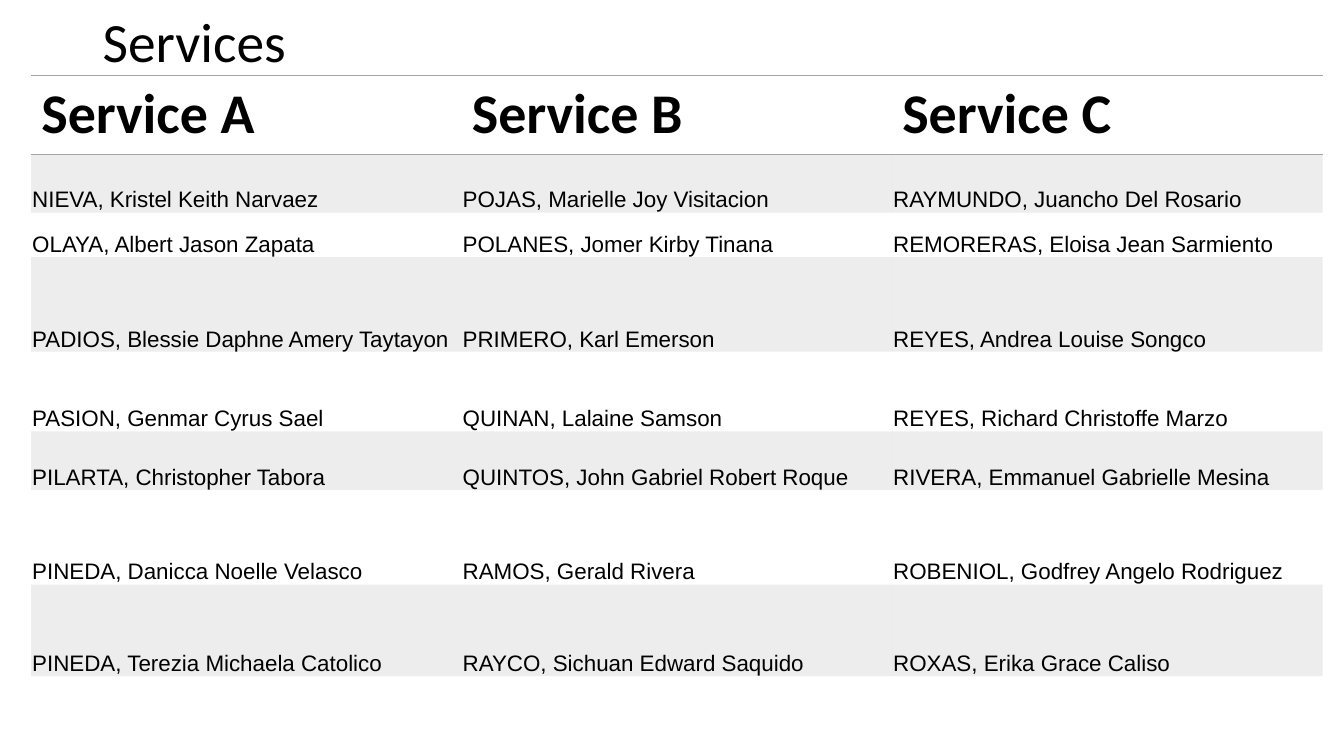
from dataclasses import dataclass

from lxml.etree import SubElement
from pptx import Presentation
from pptx.dml.color import RGBColor
from pptx.enum.text import MSO_ANCHOR
from pptx.oxml import parse_xml
from pptx.oxml.ns import nsdecls, qn
from pptx.slide import Slide
from pptx.table import Table, _Cell
from pptx.text.text import _Paragraph
from pptx.util import Emu, Pt

EMU_PER_PX = 9144
BLACK = "000000"
GREY = "A5A5A5"
BAND_OPACITY = 20
NO_TABLE_STYLE = "{2D5ABB26-0587-4C30-8999-92F81FD0307C}"


@dataclass(frozen=True)
class TextStyle:
    font: str
    size: float
    bold: bool = False


@dataclass(frozen=True)
class ServiceRow:
    height: int
    names: tuple[str, str, str]


TITLE_STYLE = TextStyle("Calibri", 39.6)
HEADER_STYLE = TextStyle("Calibri", 40, True)
NAME_STYLE = TextStyle("Arial", 16)

HEADER = ServiceRow(78, ("Service A", "Service B", "Service C"))
MEMBERS = [
    ServiceRow(58, ("NIEVA, Kristel Keith Narvaez", "POJAS, Marielle Joy Visitacion",
                    "RAYMUNDO, Juancho Del Rosario")),
    ServiceRow(44, ("OLAYA, Albert Jason Zapata", "POLANES, Jomer Kirby Tinana",
                    "REMORERAS, Eloisa Jean Sarmiento")),
    ServiceRow(94, ("PADIOS, Blessie Daphne Amery Taytayon", "PRIMERO, Karl Emerson",
                    "REYES, Andrea Louise Songco")),
    ServiceRow(79, ("PASION, Genmar Cyrus Sael", "QUINAN, Lalaine Samson",
                    "REYES, Richard Christoffe Marzo")),
    ServiceRow(58, ("PILARTA, Christopher Tabora", "QUINTOS, John Gabriel Robert Roque",
                    "RIVERA, Emmanuel Gabrielle Mesina")),
    ServiceRow(94, ("PINEDA, Danicca Noelle Velasco", "RAMOS, Gerald Rivera",
                    "ROBENIOL, Godfrey Angelo Rodriguez")),
    ServiceRow(91, ("PINEDA, Terezia Michaela Catolico", "RAYCO, Sichuan Edward Saquido",
                    "ROXAS, Erika Grace Caliso")),
]
EMPTY_ROW = ServiceRow(66, ("", "", ""))
ROWS = [HEADER, *MEMBERS, EMPTY_ROW]


def px(length: int) -> Emu:
    return Emu(length * EMU_PER_PX)


def color(value: str) -> RGBColor:
    return RGBColor.from_string(value)


def write(paragraph: _Paragraph, text: str, style: TextStyle) -> None:
    paragraph.text = text
    paragraph.font.name = style.font
    paragraph.font.size = Pt(style.size)
    paragraph.font.bold = style.bold
    paragraph.font.color.rgb = color(BLACK)


def add_title(slide: Slide, text: str) -> None:
    shape = slide.shapes.add_textbox(px(92), px(12), px(1150), px(64))
    frame = shape.text_frame
    frame.word_wrap = True
    frame.vertical_anchor = MSO_ANCHOR.MIDDLE
    paragraph = frame.paragraphs[0]
    paragraph.line_spacing = 0.9
    write(paragraph, text, TITLE_STYLE)


def add_rules(cell: _Cell) -> None:
    properties = cell._tc.get_or_add_tcPr()
    for position, side in enumerate(("lnT", "lnB")):
        rule = parse_xml(
            f'<a:{side} {nsdecls("a")} w="{Pt(1)}"><a:solidFill>'
            f'<a:srgbClr val="{GREY}"/></a:solidFill></a:{side}>'
        )
        properties.insert(position, rule)


def fill_band(cell: _Cell) -> None:
    cell.fill.solid()
    cell.fill.fore_color.rgb = color(GREY)
    for tint in cell._tc.tcPr.iter(qn("a:srgbClr")):
        SubElement(tint, qn("a:alpha")).set("val", str(BAND_OPACITY * 1000))


def format_header(cell: _Cell, text: str) -> None:
    write(cell.text_frame.paragraphs[0], text, HEADER_STYLE)
    cell.fill.background()
    add_rules(cell)


def format_member(cell: _Cell, text: str, banded: bool) -> None:
    write(cell.text_frame.paragraphs[0], text, NAME_STYLE)
    cell.vertical_anchor = MSO_ANCHOR.BOTTOM
    cell.margin_left = cell.margin_right = cell.margin_top = px(1)
    cell.margin_bottom = 0
    if banded:
        fill_band(cell)
    else:
        cell.fill.background()


def add_services_table(slide: Slide) -> None:
    height = sum(row.height for row in ROWS)
    shape = slide.shapes.add_table(
        len(ROWS), len(HEADER.names), px(31), px(75), px(1280), px(height)
    )
    table: Table = shape.table
    table.first_row = table.horz_banding = False
    table._tbl.tblPr.find(qn("a:tableStyleId")).text = NO_TABLE_STYLE
    for column in table.columns:
        column.width = px(427)
    for index, row in enumerate(ROWS):
        table.rows[index].height = px(row.height)
        for cell, name in zip(table.rows[index].cells, row.names):
            if row is HEADER:
                format_header(cell, name)
            else:
                format_member(cell, name, index % 2 == 1 and row is not EMPTY_ROW)


def main() -> None:
    presentation = Presentation()
    presentation.slide_width = px(1333)
    presentation.slide_height = px(750)
    slide = presentation.slides.add_slide(presentation.slide_layouts[6])
    add_title(slide, "Services")
    add_services_table(slide)
    presentation.save("out.pptx")


if __name__ == "__main__":
    main()
